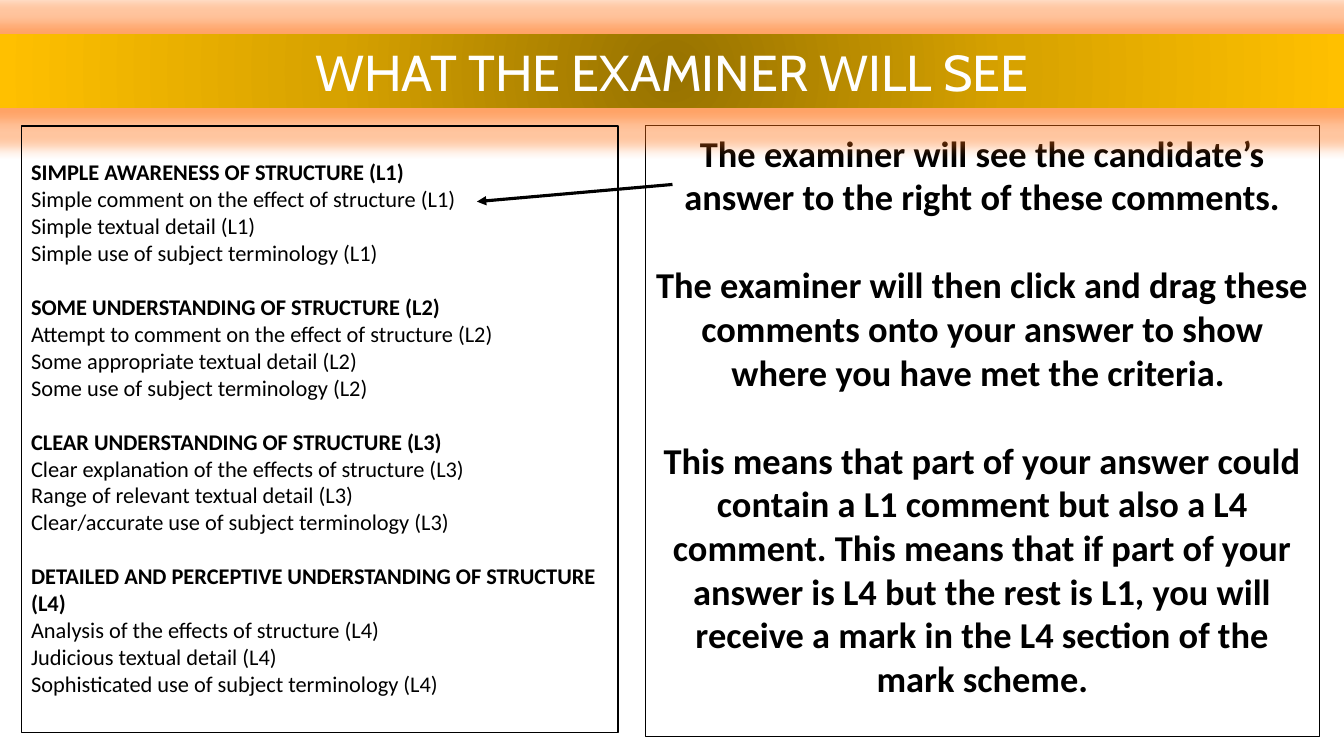
import pptx
import pptx.dml.color
import pptx.enum.shapes
import pptx.enum.text
import pptx.oxml
import pptx.oxml.ns
import pptx.util

Inches = pptx.util.Inches
Pt = pptx.util.Pt
qn = pptx.oxml.ns.qn
Align = pptx.enum.text.PP_ALIGN
Anchor = pptx.enum.text.MSO_ANCHOR

theme = {
    "ink": "000000", "title_ink": "FFFFFF", "glow": "FF6F0F",
    "gradient": [(0, "977200"), (50, "D7A200"), (100, "FFC000")],
    "title_font": "Cabin", "body_font": "Calibri",
    "title_size": 36, "advice_size": 26, "criteria_size": 16,
    "border": 0.75, "arrow": 2.25,
    "line_height": 1.22,
}

advice = [
    "The examiner will see the candidate’s answer to the right of these comments.",
    "The examiner will then click and drag these comments onto your answer to show "
    "where you have met the criteria. ",
    "This means that part of your answer could contain a L1 comment but also a L4 comment. "
    "This means that if part of your answer is L4 but the rest is L1, you will receive "
    "a mark in the L4 section of the mark scheme.",
]
levels = [
    ("SIMPLE AWARENESS OF STRUCTURE", "Simple comment on the effect of structure",
     "Simple textual detail", "Simple use of subject terminology"),
    ("SOME UNDERSTANDING OF STRUCTURE", "Attempt to comment on the effect of structure",
     "Some appropriate textual detail", "Some use of subject terminology"),
    ("CLEAR UNDERSTANDING OF STRUCTURE", "Clear explanation of the effects of structure",
     "Range of relevant textual detail", "Clear/accurate use of subject terminology"),
    ("DETAILED AND PERCEPTIVE UNDERSTANDING OF STRUCTURE", "Analysis of the effects of structure",
     "Judicious textual detail", "Sophisticated use of subject terminology"),
]


def add_panel(left, top, width, height, anchor=Anchor.TOP, top_inset=0.05):
    shape = slide.shapes.add_shape(
        pptx.enum.shapes.MSO_SHAPE.RECTANGLE,
        Inches(left), Inches(top), Inches(width), Inches(height))
    shape.shadow.inherit = False
    shape.fill.background()
    shape.line.color.rgb = pptx.dml.color.RGBColor.from_string(theme["ink"])
    shape.line.width = Pt(theme["border"])
    frame_format = {"word_wrap": True, "vertical_anchor": anchor, "margin_top": Inches(top_inset)}
    for name, value in frame_format.items():
        setattr(shape.text_frame, name, value)
    return shape


def write_lines(shape, lines, size, font, color, alignment):
    """Write (text, bold, gap above) lines, one paragraph each."""
    frame = shape.text_frame
    for index, (text, bold, gap) in enumerate(lines):
        paragraph = frame.add_paragraph() if index else frame.paragraphs[0]
        paragraph.alignment = alignment
        paragraph.space_before = Pt(gap)
        run = paragraph.add_run()
        run.text = text
        for name, value in {"name": font, "size": Pt(size), "bold": bold}.items():
            setattr(run.font, name, value)
        run.font.color.rgb = pptx.dml.color.RGBColor.from_string(color)


presentation = pptx.Presentation()
presentation.slide_width = Inches(13.33)
presentation.slide_height = Inches(7.5)
slide = presentation.slides.add_slide(presentation.slide_layouts[6])

# Advice panel, with one line of space between paragraphs
advice_gap = round(theme["advice_size"] * theme["line_height"], 1)
advice_panel = add_panel(6.4, 1.25, 6.69, 6.06)
advice_lines = [(text, True, advice_gap if index else 0) for index, text in enumerate(advice)]
write_lines(advice_panel, advice_lines, theme["advice_size"], theme["body_font"],
            theme["ink"], Align.CENTER)

# Arrow from the advice to the criteria
arrow = slide.shapes.add_connector(
    pptx.enum.shapes.MSO_CONNECTOR.STRAIGHT,
    Inches(6.67), Inches(1.83), Inches(4.73), Inches(2))
arrow.line.color.rgb = pptx.dml.color.RGBColor.from_string(theme["ink"])
arrow.line.width = Pt(theme["arrow"])
namespace = pptx.oxml.ns.nsdecls("a")
arrow_properties = arrow._element.spPr
arrow_properties.find(qn("a:ln")).append(
    pptx.oxml.parse_xml(f'<a:tailEnd {namespace} type="triangle"/>'))
arrow_properties.append(pptx.oxml.parse_xml(f"<a:effectLst {namespace}/>"))

# Title banner with a radial gradient and a glow
banner = add_panel(0, 0.34, 13.33, 0.73, Anchor.MIDDLE)
banner.line.fill.background()
banner.fill.gradient()
stops = "".join(f'<a:gs pos="{position * 1000}"><a:srgbClr val="{color}"/></a:gs>'
                for position, color in theme["gradient"])
banner_properties = banner._element.spPr
banner_properties.replace(banner_properties.find(qn("a:gradFill")), pptx.oxml.parse_xml(
    f'<a:gradFill {namespace}><a:gsLst>{stops}</a:gsLst><a:path path="circle">'
    '<a:fillToRect l="50000" t="50000" r="50000" b="50000"/></a:path></a:gradFill>'))
banner_properties.find(qn("a:effectLst")).append(pptx.oxml.parse_xml(
    f'<a:glow {namespace} rad="{Inches(0.25)}"><a:srgbClr val="{theme["glow"]}">'
    '<a:alpha val="40000"/></a:srgbClr></a:glow>'))
write_lines(banner, [("WHAT THE EXAMINER WILL SEE", False, 0)], theme["title_size"],
            theme["title_font"], theme["title_ink"], Align.CENTER)

# Criteria panel: a bold heading and three comments per level
criteria_gap = round(theme["criteria_size"] * theme["line_height"], 1)
criteria_panel = add_panel(0.21, 1.25, 5.92, 6.02, top_inset=0.32)
criteria_lines = []
for level, texts in enumerate(levels, start=1):
    for index, text in enumerate(texts):
        is_heading = index == 0
        gap = criteria_gap if is_heading and level > 1 else 0
        criteria_lines.append((f"{text} (L{level})", is_heading, gap))
write_lines(criteria_panel, criteria_lines, theme["criteria_size"], theme["body_font"],
            theme["ink"], Align.LEFT)

presentation.save("out.pptx")
